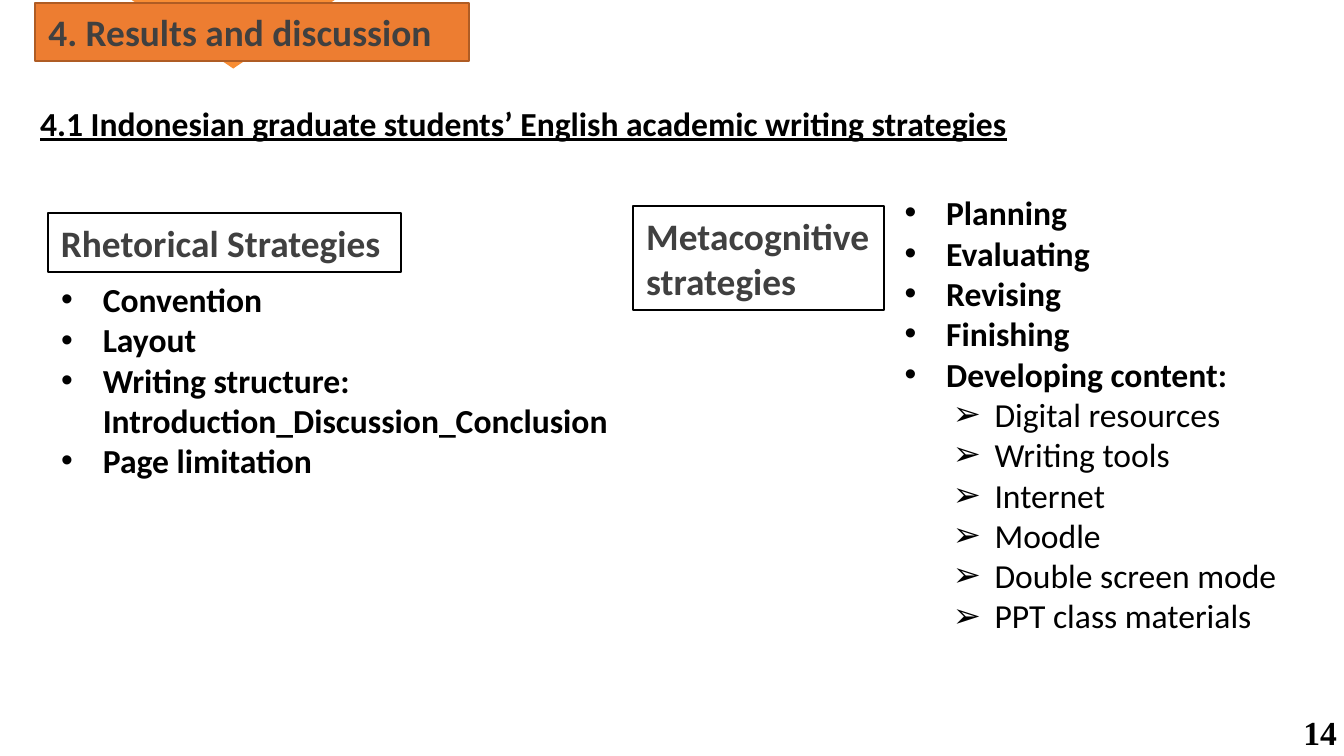
import dataclasses

import pptx
import pptx.dml.color
import pptx.enum.shapes
import pptx.enum.text
import pptx.oxml.ns
import pptx.util
import lxml.etree

PX = 4572  # EMU in one px, 200 px to the inch


@dataclasses.dataclass(frozen=True)
class Theme:
    accent: str = "ED7D31"
    accent_line: str = "AF5C24"
    pointer: str = "F88D34"
    heading: str = "404040"
    ink: str = "000000"
    paper: str = "FFFFFF"
    font: str = "Calibri"
    number_font: str = "Times New Roman"
    heading_size: int = 20
    body_size: int = 18


THEME = Theme()
BULLET_HANG = 62
SUB_INDENT = 134


def color(value):
    return pptx.dml.color.RGBColor.from_string(value)


def place(shape, box):
    shape.left, shape.top, shape.width, shape.height = (n * PX for n in box)


def paint(shape, fill, line=None):
    shape.fill.solid()
    shape.fill.fore_color.rgb = color(fill)
    if line:
        shape.line.color.rgb = color(line)
        shape.line.width = pptx.util.Pt(1)
    else:
        shape.line.fill.background()


def prepare_frame(shape, anchor=pptx.enum.text.MSO_ANCHOR.TOP):
    frame = shape.text_frame
    frame.word_wrap = True
    frame.auto_size = pptx.enum.text.MSO_AUTO_SIZE.NONE
    frame.vertical_anchor = anchor
    return frame


def write(paragraph, text, size=THEME.body_size, ink=THEME.ink,
          font=THEME.font, bold=True, underline=False):
    paragraph.alignment = pptx.enum.text.PP_ALIGN.LEFT
    paragraph.space_before = pptx.util.Pt(0)
    run = paragraph.add_run()
    run.text = text
    run.font.name = font
    run.font.size = pptx.util.Pt(size)
    run.font.bold = bold
    run.font.underline = underline
    run.font.color.rgb = color(ink)


def set_bullet(paragraph, mark, indent):
    properties = paragraph._p.get_or_add_pPr()
    properties.set("marL", str(indent * PX))
    properties.set("indent", str(-BULLET_HANG * PX))
    font = lxml.etree.SubElement(properties, pptx.oxml.ns.qn("a:buFont"))
    font.set("typeface", "Arial")
    bullet = lxml.etree.SubElement(properties, pptx.oxml.ns.qn("a:buChar"))
    bullet.set("char", mark)


def add_paragraphs(frame, count):
    return [frame.paragraphs[0]] + [frame.add_paragraph() for _ in range(count - 1)]


def add_text(slide, box, text, **text_format):
    shape = slide.shapes.add_textbox(0, 0, 0, 0)
    place(shape, box)
    write(prepare_frame(shape).paragraphs[0], text, **text_format)


def build_title(slide, box, text):
    left, top, width, height = box
    # Pointer behind the title bar
    pointer = slide.shapes.add_shape(
        pptx.enum.shapes.MSO_SHAPE.ISOSCELES_TRIANGLE, 0, 0, 0, 0)
    place(pointer, (left + 144, top - 4, 302, 102))
    pointer.rotation = 180
    pointer.shadow.inherit = False
    paint(pointer, THEME.pointer)
    # Title bar
    title = slide.shapes.title
    title._element.addprevious(pointer._element)
    place(title, box)
    paint(title, THEME.accent, THEME.accent_line)
    frame = prepare_frame(title, pptx.enum.text.MSO_ANCHOR.MIDDLE)
    write(frame.paragraphs[0], text, size=THEME.heading_size, ink=THEME.heading)


def build_heading(slide, box, lines):
    shape = slide.shapes.add_shape(
        pptx.enum.shapes.MSO_SHAPE.RECTANGLE, 0, 0, 0, 0)
    place(shape, box)
    shape.shadow.inherit = False
    paint(shape, THEME.paper, THEME.ink)
    frame = prepare_frame(shape, pptx.enum.text.MSO_ANCHOR.MIDDLE)
    for paragraph, line in zip(add_paragraphs(frame, len(lines)), lines):
        write(paragraph, line, size=THEME.heading_size, ink=THEME.heading)


def build_list(placeholder, box, items, sub_items=()):
    place(placeholder, box)
    rows = [(item, 0) for item in items] + [(item, 1) for item in sub_items]
    paragraphs = add_paragraphs(prepare_frame(placeholder), len(rows))
    for paragraph, (text, level) in zip(paragraphs, rows):
        paragraph.level = level
        paragraph.space_before = pptx.util.Pt(0)
        set_bullet(paragraph, "•➢"[level], (BULLET_HANG, SUB_INDENT)[level])
        write(paragraph, text, bold=level == 0)


def main():
    presentation = pptx.Presentation()
    presentation.slide_width = 2000 * PX
    presentation.slide_height = 1125 * PX
    two_content = presentation.slide_layouts[3]
    slide = presentation.slides.add_slide(two_content)

    build_title(slide, (52, 4, 646, 87), "4. Results and discussion")
    add_text(slide, (40, 143, 1490, 80),
             "4.1 Indonesian graduate students’ English academic writing strategies",
             underline=True)

    # Rhetorical strategies
    build_heading(slide, (71, 317, 526, 88), ["Rhetorical Strategies"])
    build_list(slide.placeholders[1], (71, 405, 870, 324), [
        "Convention", "Layout",
        "Writing structure: Introduction_Discussion_Conclusion",
        "Page limitation"])

    # Metacognitive strategies
    build_heading(slide, (942, 307, 374, 154), ["Metacognitive", "strategies"])
    build_list(
        slide.placeholders[2], (1326, 276, 600, 686),
        ["Planning", "Evaluating", "Revising", "Finishing", "Developing content:"],
        ["Digital resources", "Writing tools", "Internet", "Moodle",
         "Double screen mode", "PPT class materials"])

    # Page number
    add_text(slide, (1920, 1049, 94, 56), "14", font=THEME.number_font)
    presentation.save("out.pptx")


if __name__ == "__main__":
    main()
